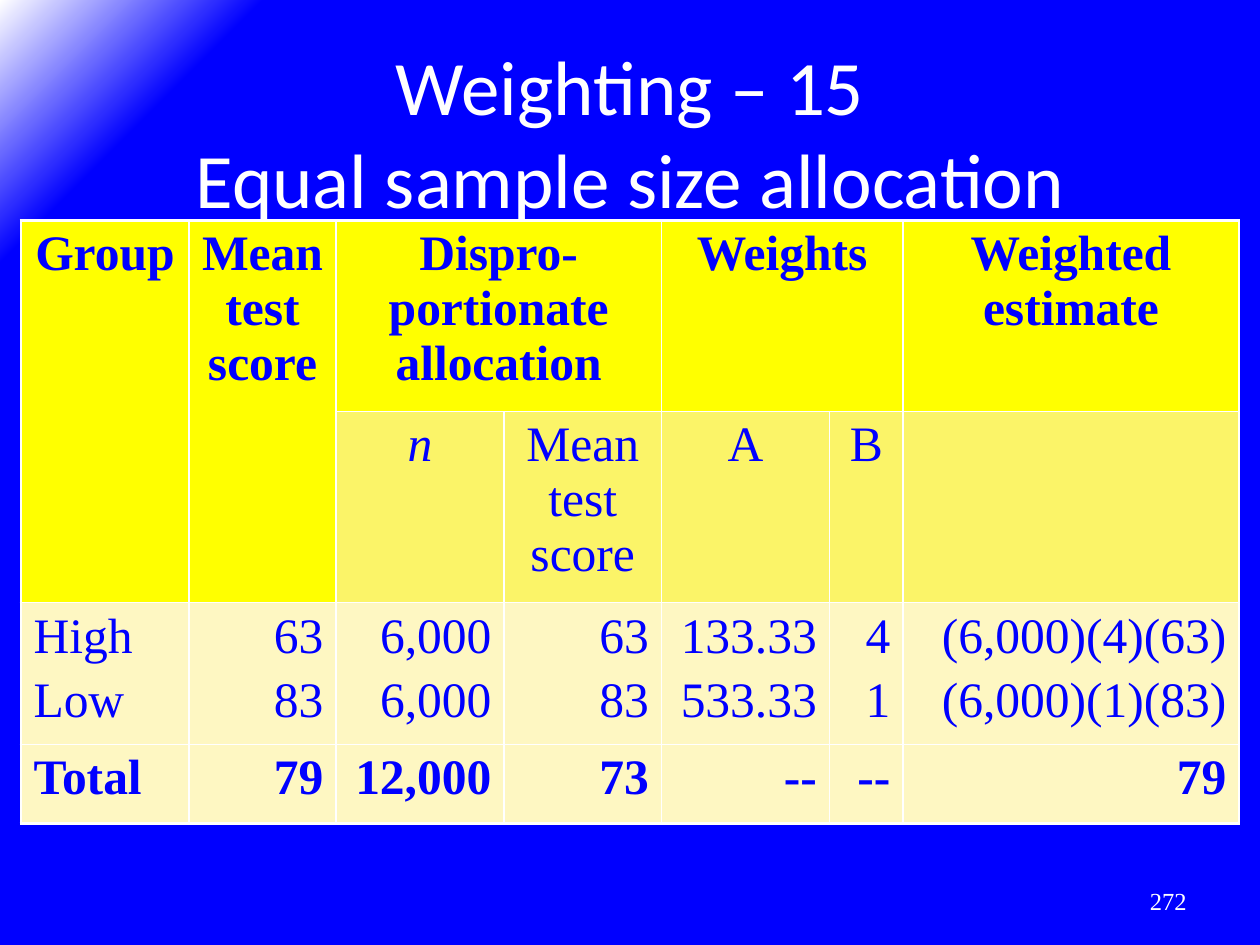
from dataclasses import dataclass

from pptx import Presentation
from pptx import oxml
from pptx.dml.color import RGBColor
from pptx.enum import text as t
from pptx.oxml.ns import nsdecls
from pptx.util import Inches, Pt


@dataclass(frozen=True)
class Theme:
    """Colours, fonts and type sizes of the slide."""
    blue: str = "0000FF"
    white: str = "FFFFFF"
    header: str = "FFFF00"
    subheader: str = "FBF468"
    body: str = "FEF7C2"
    title_font: str = "Calibri"
    text_font: str = "Times New Roman"
    title_size: float = 52.8
    table_size: float = 34
    number_size: float = 16.8
    outer_line: float = 2.25
    inner_line: float = 1


THEME = Theme()
COLUMN_WIDTHS = [1.6, 1.4, 1.6, 1.5, 1.6, 0.7, 3.2]
ROW_HEIGHTS = [1.8, 1.8, 1.35, 0.75]
ROW_FILLS = [THEME.header, THEME.subheader, THEME.body, THEME.body]
MERGES = [((0, 0), (1, 0)), ((0, 1), (1, 1)), ((0, 2), (0, 3)), ((0, 4), (0, 5))]
ROWS = [
    ["Group", "Mean test score", "Dispro-portionate allocation", "",
     "Weights", "", "Weighted estimate"],
    ["", "", "n", "Mean test score", "A", "B", ""],
    ["High\nLow", "63\n83", "6,000\n6,000", "63\n83", "133.33\n533.33", "4\n1",
     "(6,000)(4)(63)\n(6,000)(1)(83)"],
    ["Total", "79", "12,000", "73", "--", "--", "79"],
]


def apply_format(target, values):
    """Set each attribute of target from a dict of values."""
    for name, value in values.items():
        setattr(target, name, value)


def format_text(frame, font, size, color, align, space=0, bold=False, italic=False):
    """Format every paragraph and run of a text frame."""
    for paragraph in frame.paragraphs:
        apply_format(paragraph, {"alignment": align, "space_before": Pt(space)})
        for run in paragraph.runs:
            apply_format(run.font, {"name": font, "size": Pt(size),
                                    "bold": bold, "italic": italic})
            run.font.color.rgb = RGBColor.from_string(color)


def paint_background(slide):
    """Fill the slide with blue that fades to white at the top left."""
    slide.background.fill.solid()
    stops = [(0, THEME.blue), (88, THEME.blue), (100, THEME.white)]
    stop_xml = "".join(f'<a:gs pos="{position * 1000}"><a:srgbClr val="{color}"/></a:gs>'
                       for position, color in stops)
    properties = slide.background._cSld.bg.bgPr
    properties[0] = oxml.parse_xml(
        f'<a:gradFill {nsdecls("a")} rotWithShape="1"><a:gsLst>{stop_xml}</a:gsLst>'
        '<a:path path="circle"><a:fillToRect l="100000" t="100000"/></a:path></a:gradFill>')


def add_title(slide, wording):
    """Place and format the title placeholder."""
    title = slide.shapes.title
    apply_format(title, {"left": Inches(0.9), "top": Inches(0.5),
                         "width": Inches(10.2), "height": Inches(1.5)})
    title.text_frame.text = wording
    apply_format(title.text_frame, {"auto_size": t.MSO_AUTO_SIZE.NONE,
                                    "vertical_anchor": t.MSO_ANCHOR.MIDDLE})
    format_text(title.text_frame, THEME.title_font, THEME.title_size,
                THEME.white, t.PP_ALIGN.CENTER)


def add_page_number(slide, number):
    """Add the page number at the lower right."""
    frame = slide.shapes.add_textbox(Inches(8.6), Inches(8.34),
                                     Inches(2.8), Inches(0.48)).text_frame
    frame.text = number
    apply_format(frame, {"word_wrap": True, "vertical_anchor": t.MSO_ANCHOR.MIDDLE})
    format_text(frame, THEME.text_font, THEME.number_size, THEME.white, t.PP_ALIGN.RIGHT)


def add_borders(cell, row, column):
    """Draw white cell borders, thicker on the outside of the table."""
    outer_sides = {"L": column == 0, "R": column == len(COLUMN_WIDTHS) - 1,
                   "T": row == 0, "B": row == len(ROW_HEIGHTS) - 1}
    properties = cell._tc.get_or_add_tcPr()
    for index, (side, is_outer) in enumerate(outer_sides.items()):
        width = Pt(THEME.outer_line if is_outer else THEME.inner_line)
        properties.insert(index, oxml.parse_xml(
            f'<a:ln{side} {nsdecls("a")} w="{width}"><a:solidFill>'
            f'<a:srgbClr val="{THEME.white}"/></a:solidFill></a:ln{side}>'))


def fill_cell(cell, row, column):
    """Write and format one cell according to its row and column."""
    apply_format(cell, {"margin_left": Inches(0.12), "margin_right": Inches(0.12),
                        "margin_top": Inches(0.06), "margin_bottom": Inches(0.06)})
    wording = ROWS[row][column]
    if wording:
        cell.text = wording
    if row < 2:
        align = t.PP_ALIGN.CENTER
    else:
        align = t.PP_ALIGN.RIGHT if column else t.PP_ALIGN.LEFT
    format_text(cell.text_frame, THEME.text_font, THEME.table_size, THEME.blue, align,
                space=THEME.table_size * 0.2, bold=row in (0, 3), italic=wording == "n")
    cell.fill.solid()
    cell.fill.fore_color.rgb = RGBColor.from_string(ROW_FILLS[row])
    add_borders(cell, row, column)


def add_weighting_table(slide):
    """Build the table of allocation, weights and estimates."""
    table = slide.shapes.add_table(
        len(ROW_HEIGHTS), len(COLUMN_WIDTHS), Inches(0.2), Inches(2.1),
        Inches(sum(COLUMN_WIDTHS)), Inches(sum(ROW_HEIGHTS))).table
    apply_format(table, {"first_row": False, "horz_banding": False})
    for column, width in zip(table.columns, COLUMN_WIDTHS):
        column.width = Inches(width)
    for row, height in zip(table.rows, ROW_HEIGHTS):
        row.height = Inches(height)
    for start, end in MERGES:
        table.cell(*start).merge(table.cell(*end))
    for row in range(len(ROW_HEIGHTS)):
        for column in range(len(COLUMN_WIDTHS)):
            fill_cell(table.cell(row, column), row, column)


def main():
    """Build and save the slide."""
    presentation = Presentation()
    apply_format(presentation, {"slide_width": Inches(12), "slide_height": Inches(9)})
    slide = presentation.slides.add_slide(presentation.slide_layouts[5])
    paint_background(slide)
    add_page_number(slide, "272")
    add_title(slide, "Weighting – 15\vEqual sample size allocation")
    add_weighting_table(slide)
    presentation.save("out.pptx")


if __name__ == "__main__":
    main()
